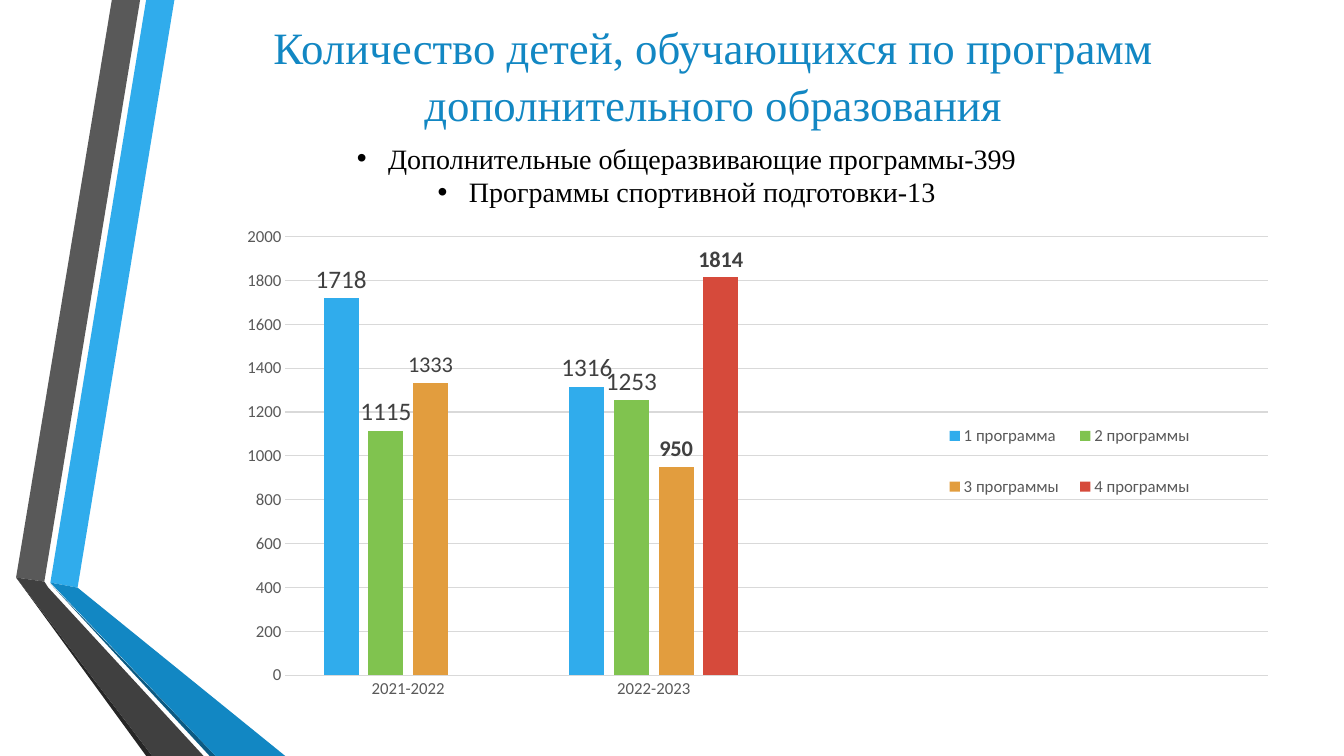
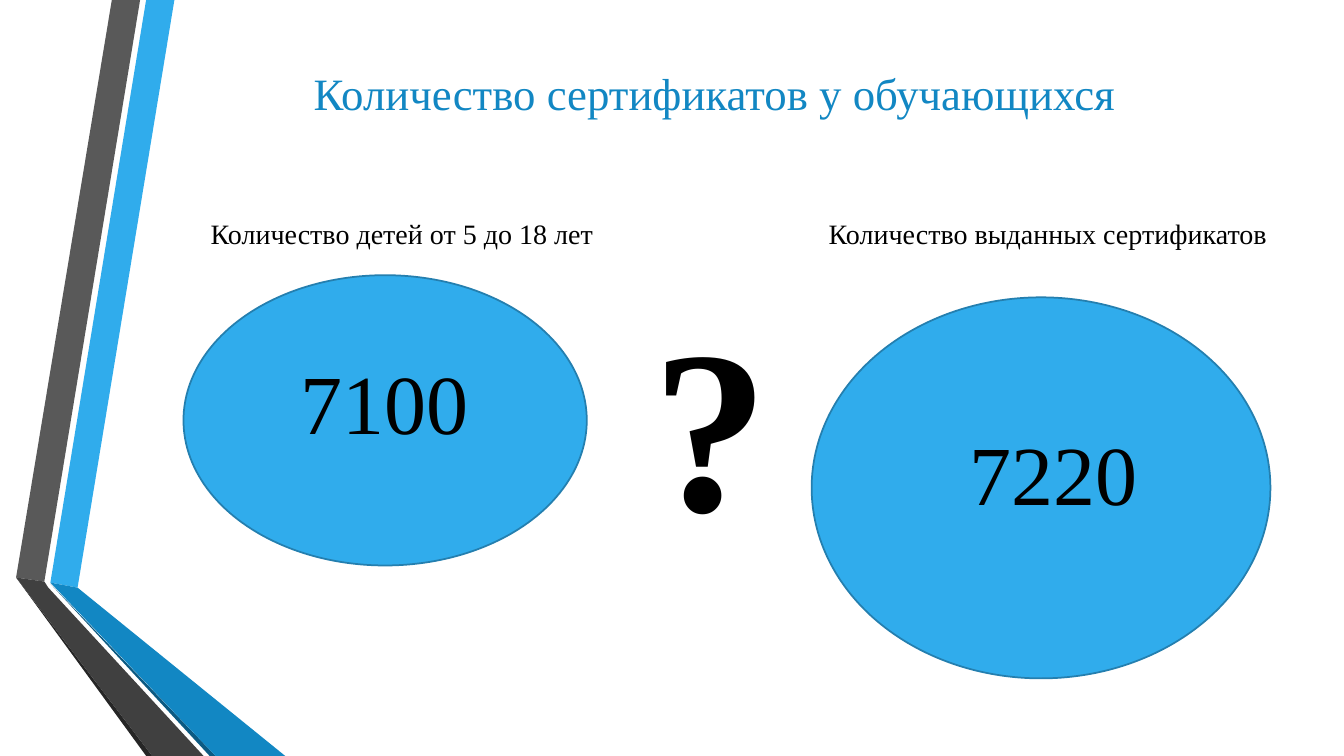
from lxml import etree
from pptx import Presentation
from pptx.chart import data
from pptx.dml.color import RGBColor
from pptx.enum import chart as ch, shapes, text
from pptx.oxml import ns
from pptx.util import Inches, Pt

BLACK = RGBColor(0x00, 0x00, 0x00)
INK = RGBColor(0x26, 0x26, 0x26)
DARK = RGBColor(0x40, 0x40, 0x40)
GREY = RGBColor(0x59, 0x59, 0x59)
GRID = RGBColor(0xD9, 0xD9, 0xD9)
SKY = RGBColor(0x30, 0xAC, 0xEC)
BLUE = RGBColor(0x12, 0x87, 0xC3)
NAVY = RGBColor(0x0C, 0x5A, 0x82)
OUTLINE = RGBColor(0x24, 0x7F, 0xAF)
GREEN = RGBColor(0x80, 0xC3, 0x4F)
ORANGE = RGBColor(0xE2, 0x9D, 0x3E)
RED = RGBColor(0xD6, 0x4A, 0x3B)
SERIF, SANS = "Times New Roman", "Calibri"
LEFT, CENTER = text.PP_ALIGN.LEFT, text.PP_ALIGN.CENTER

BANDS = [
    (SKY, [(0.5, 5.78), (0.77, 5.83), (1.73, 0), (1.45, 0)]),
    (GREY, [(1.39, 0), (1.11, 0), (0.16, 5.73), (0.44, 5.77)]),
    (INK, [(0.16, 5.73), (1.45, 7.5), (1.51, 7.5)]),
    (NAVY, [(0.5, 5.79), (2.08, 7.5), (2.14, 7.5)]),
    (BLUE, [(0.5, 5.78), (2.14, 7.5), (2.83, 7.5), (0.77, 5.83)]),
    (DARK, [(2.02, 7.5), (0.48, 5.83), (0.44, 5.77), (0.16, 5.73), (1.51, 7.5)]),
]

SERIES = [
    ("1 программа", SKY, (1718, 1316), [(18, False), (18, False)]),
    ("2 программы", GREEN, (1115, 1253), [(18, False), (18, False)]),
    ("3 программы", ORANGE, (1333, 950), [(16, False), (16, True)]),
    ("4 программы", RED, (None, 1814), [None, (16, True)]),
]


def set_font(font, name, size, color, bold=False):
    """Apply name, size, colour and weight to a font."""
    font.name, font.size, font.bold = name, Pt(size), bold
    font.color.rgb = color


def place(s, box):
    """Move a shape to a box given in inches."""
    s.left, s.top, s.width, s.height = (Inches(v) for v in box)


def add_bands(slide, layout):
    """Draw the folded side bands and hand them to the shared layout."""
    for i, (color, points) in enumerate(BANDS):
        start, *rest = [(Inches(x), Inches(y)) for x, y in points]
        builder = slide.shapes.build_freeform(*start)
        builder.add_line_segments(rest, close=True)
        s = builder.convert_to_shape()
        s.shadow.inherit = False
        s.fill.solid()
        s.fill.fore_color.rgb = color
        s.line.fill.background()
        layout.shapes._spTree.insert(2 + i, s._element)


def set_title(slide, box, words, align):
    """Place and format the slide title."""
    s = slide.shapes.title
    place(s, box)
    tf = s.text_frame
    tf.word_wrap, tf.auto_size = True, text.MSO_AUTO_SIZE.NONE
    tf.vertical_anchor = text.MSO_ANCHOR.TOP
    p = tf.paragraphs[0]
    p.alignment, p.line_spacing = align, 1.06
    r = p.add_run()
    r.text = words
    set_font(r.font, SERIF, 32, BLUE)


def add_text(slide, box, lines, size, align=LEFT, bold=False, bullet=False):
    """Add a text box with one paragraph for each line."""
    s = slide.shapes.add_textbox(*(Inches(v) for v in box))
    tf = s.text_frame
    tf.word_wrap = True
    for i, line in enumerate(lines):
        p = tf.add_paragraph() if i else tf.paragraphs[0]
        p.alignment = align
        r = p.add_run()
        r.text = line
        set_font(r.font, SERIF, size, BLACK, bold)
        if bullet:
            pr = p._p.get_or_add_pPr()
            pr.set("marL", str(Inches(0.31)))
            pr.set("indent", str(-Inches(0.31)))
            etree.SubElement(pr, ns.qn("a:buFont")).set("typeface", "Arial")
            etree.SubElement(pr, ns.qn("a:buChar")).set("char", "•")


def add_ellipse(slide, box):
    """Add a filled ellipse."""
    s = slide.shapes.add_shape(shapes.MSO_SHAPE.OVAL, *(Inches(v) for v in box))
    s.shadow.inherit = False
    s.fill.solid()
    s.fill.fore_color.rgb = SKY
    s.line.color.rgb, s.line.width = OUTLINE, Pt(1.25)


def make_layout(box, inner=False):
    """Return a manual chart layout for fractions of the chart area."""
    layout = etree.Element(ns.qn("c:layout"))
    manual = etree.SubElement(layout, ns.qn("c:manualLayout"))
    items = [("layoutTarget", "inner")] if inner else []
    items += [("xMode", "edge"), ("yMode", "edge"), *zip("xywh", box)]
    for tag, value in items:
        etree.SubElement(manual, ns.qn("c:" + tag)).set("val", str(value))
    return layout


def format_axes(chart):
    """Style both axes and the gridlines."""
    for axis in (chart.category_axis, chart.value_axis):
        axis.major_tick_mark = axis.minor_tick_mark = ch.XL_TICK_MARK.NONE
        set_font(axis.tick_labels.font, SANS, 12, GREY)
    grid = chart.value_axis.major_gridlines.format.line
    for line in (chart.category_axis.format.line, grid):
        line.color.rgb, line.width = GRID, Pt(0.75)
    axis = chart.value_axis
    axis.format.line.fill.background()
    axis.minimum_scale, axis.maximum_scale, axis.major_unit = 0, 2000, 200


def add_programme_chart(slide, box):
    """Add the clustered columns of children by number of programmes."""
    cd = data.CategoryChartData()
    cd.categories = ["2021-2022", "2022-2023", "", ""]
    for name, _, values, _ in SERIES:
        cd.add_series(name, (*values, None, None))
    chart = slide.shapes.add_chart(
        ch.XL_CHART_TYPE.COLUMN_CLUSTERED, *(Inches(v) for v in box), cd).chart
    chart.has_title = False
    set_font(chart.font, SANS, 10, BLACK)
    format_axes(chart)
    plot = chart.plots[0]
    plot.gap_width, plot.overlap, plot.vary_by_categories = 219, -27, False
    for series, (_, color, _, labels) in zip(plot.series, SERIES):
        series.format.fill.solid()
        series.format.fill.fore_color.rgb = color
        for i, label in enumerate(labels):
            if label:
                dl = series.points[i].data_label
                set_font(dl.font, SANS, label[0], DARK, label[1])
                dl.position = ch.XL_LABEL_POSITION.OUTSIDE_END
    chart.has_legend = True
    legend = chart.legend
    legend.position = ch.XL_LEGEND_POSITION.BOTTOM
    legend.include_in_layout = False
    set_font(legend.font, SANS, 12, GREY)
    legend._element.find(ns.qn("c:legendPos")).addnext(
        make_layout((0.68, 0.47, 0.26, 0.22)))
    area = chart._chartSpace.chart.plotArea
    for old in area.findall(ns.qn("c:layout")):
        area.remove(old)
    area.insert(0, make_layout((0.058, 0.206, 0.942, 0.73), inner=True))


def build_programmes(slide):
    """Build the slide on children in extra education programmes."""
    add_programme_chart(slide, (2.23, 1.12, 10.35, 5.96))
    set_title(slide, (1.9, 0.11, 10.35, 1.48),
              "Количество детей, обучающихся по программ дополнительного образования",
              CENTER)
    add_text(slide, (2.23, 1.35, 9.16, 0.77),
             ["Дополнительные общеразвивающие программы-399",
              "Программы спортивной подготовки-13"], 20, CENTER, bullet=True)


def build_certificates(slide):
    """Build the slide comparing children with issued certificates."""
    set_title(slide, (3.01, 0.57, 9.1, 0.64),
              "Количество сертификатов у обучающихся", LEFT)
    add_ellipse(slide, (1.82, 2.73, 4, 2.88))
    add_ellipse(slide, (8.05, 2.95, 4.55, 3.78))
    add_text(slide, (6.37, 2.72, 1.61, 2.89), ["?"], 166, bold=True)
    add_text(slide, (2.88, 3.43, 3.05, 1.11), ["7100"], 60)
    add_text(slide, (8.54, 4.13, 3.81, 1.11), ["7220"], 60, CENTER)
    add_text(slide, (1.99, 2.1, 4.4, 0.44), ["Количество детей от 5 до 18 лет"], 20)
    add_text(slide, (8.12, 2.1, 4.64, 0.74), ["Количество выданных сертификатов"], 20)


def main():
    """Create and save the presentation."""
    prs = Presentation()
    prs.slide_width, prs.slide_height = Inches(13.33), Inches(7.5)
    layout = prs.slide_layouts[5]
    for i, build in enumerate((build_programmes, build_certificates)):
        slide = prs.slides.add_slide(layout)
        if i == 0:
            add_bands(slide, layout)
        build(slide)
    prs.save("out.pptx")


if __name__ == "__main__":
    main()
